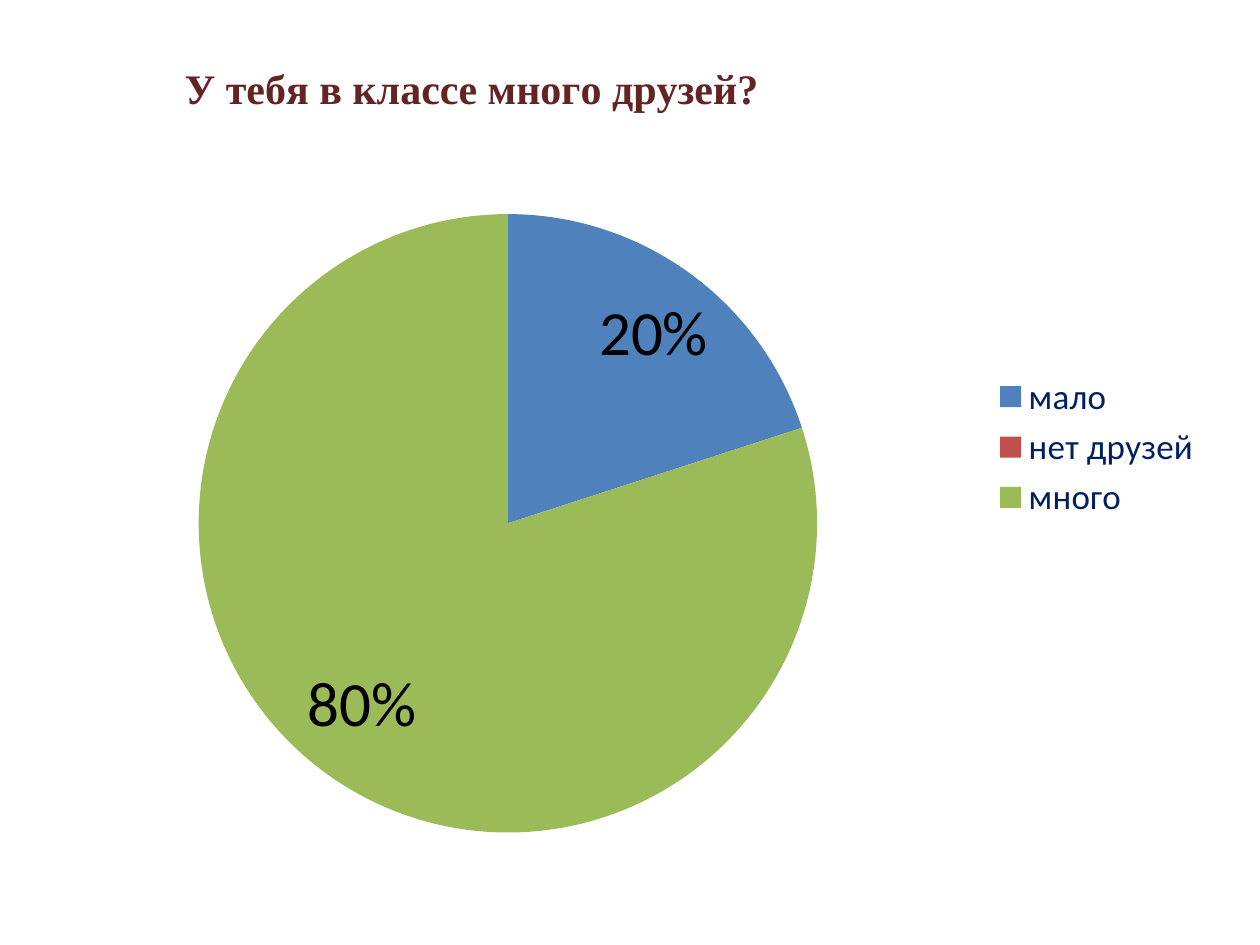
import pptx
import pptx.chart.data
import pptx.dml.color
import pptx.enum.chart
import pptx.oxml
import pptx.oxml.ns
import pptx.util

Pt = pptx.util.Pt
enum = pptx.enum.chart


def style(font, size, color, name="Calibri", bold=False):
    font.size = Pt(size)
    font.name = name
    font.bold = bold
    font.color.rgb = pptx.dml.color.RGBColor.from_string(color)


def layout(target, index, head="", **parts):
    """Place or shift a chart part by fractions of the chart's size."""
    tags = head + "".join(f'<c:{key} val="{val}"/>' for key, val in parts.items())
    for old in target.findall(pptx.oxml.ns.qn("c:layout")):
        target.remove(old)
    space = pptx.oxml.ns.nsdecls("c")
    node = pptx.oxml.parse_xml(
        f"<c:layout {space}><c:manualLayout>{tags}</c:manualLayout></c:layout>")
    target.insert(index, node)


edge = '<c:xMode val="edge"/><c:yMode val="edge"/>'
inner = '<c:layoutTarget val="inner"/>'

deck = pptx.Presentation()
deck.slide_width, deck.slide_height = Pt(720), Pt(540)
slide = deck.slides.add_slide(deck.slide_layouts[6])

data = pptx.chart.data.CategoryChartData(number_format="0%")
data.categories = ["мало", "нет друзей", "много"]
data.add_series("Series 1", [0.2, 0, 0.8])
chart = slide.shapes.add_chart(
    enum.XL_CHART_TYPE.PIE, Pt(42.5), Pt(26), Pt(652), Pt(459), data).chart
style(chart.font, 18, "000000")

# Title
title = chart.chart_title
title.text_frame.text = "У тебя в классе много друзей?"
run = title.text_frame.paragraphs[0].runs[0]
style(run.font, 24, "632523", "Times New Roman", True)
title.include_in_layout = False
layout(title._element, 1, edge, x=0.09, y=0.01)

# Legend
chart.has_legend = True
chart.legend.position = enum.XL_LEGEND_POSITION.RIGHT
chart.legend.include_in_layout = False
style(chart.legend.font, 20, "002060")

# Pie
pie = chart.plots[0]
layout(pie._element.getparent(), 0, inner + edge, x=0.1, y=0.21, w=0.56, h=0.77)
pie.vary_by_categories = True
points = pie.series[0].points
for i, color in enumerate(["4F81BD", "C0504D", "9BBB59"]):
    fill = points[i].format.fill
    fill.solid()
    fill.fore_color.rgb = pptx.dml.color.RGBColor.from_string(color)

# Labels; the format leaves zero blank
labels = pie.series[0].data_labels
labels.show_value = True
labels.show_percentage = False
labels.number_format = "0%;;"
labels.number_format_is_linked = False
labels.position = enum.XL_LABEL_POSITION.INSIDE_END
style(labels.font, 36, "000000")

# Shift the two visible labels off the rim
for i, x, y in [(0, 0.02, 0.02), (2, -0.02, -0.03)]:
    label = points[i].data_label
    style(label.font, 36, "000000")
    label.position = enum.XL_LABEL_POSITION.INSIDE_END
    layout(labels._element.findall(pptx.oxml.ns.qn("c:dLbl"))[-1], 1, x=x, y=y)

deck.save("out.pptx")
